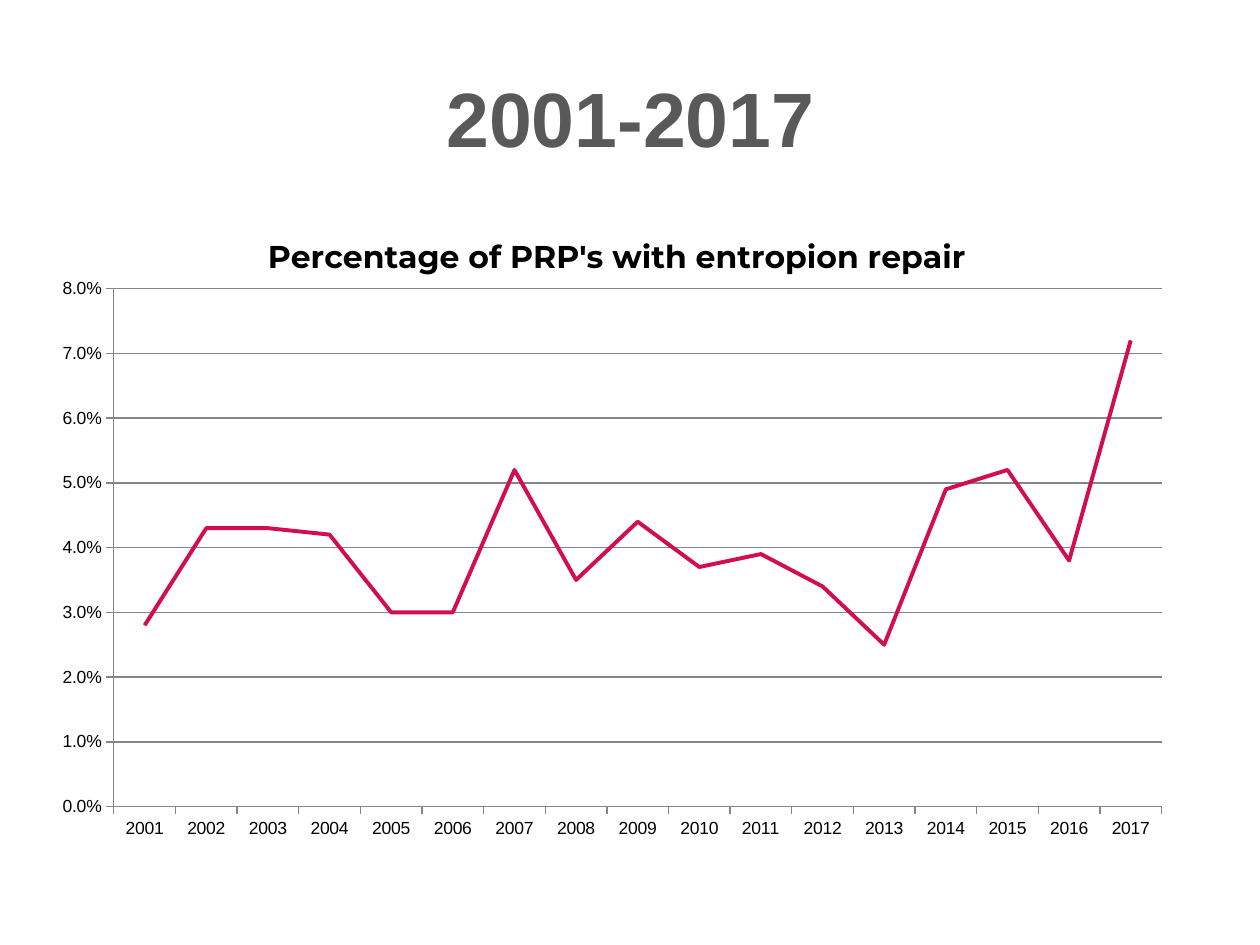
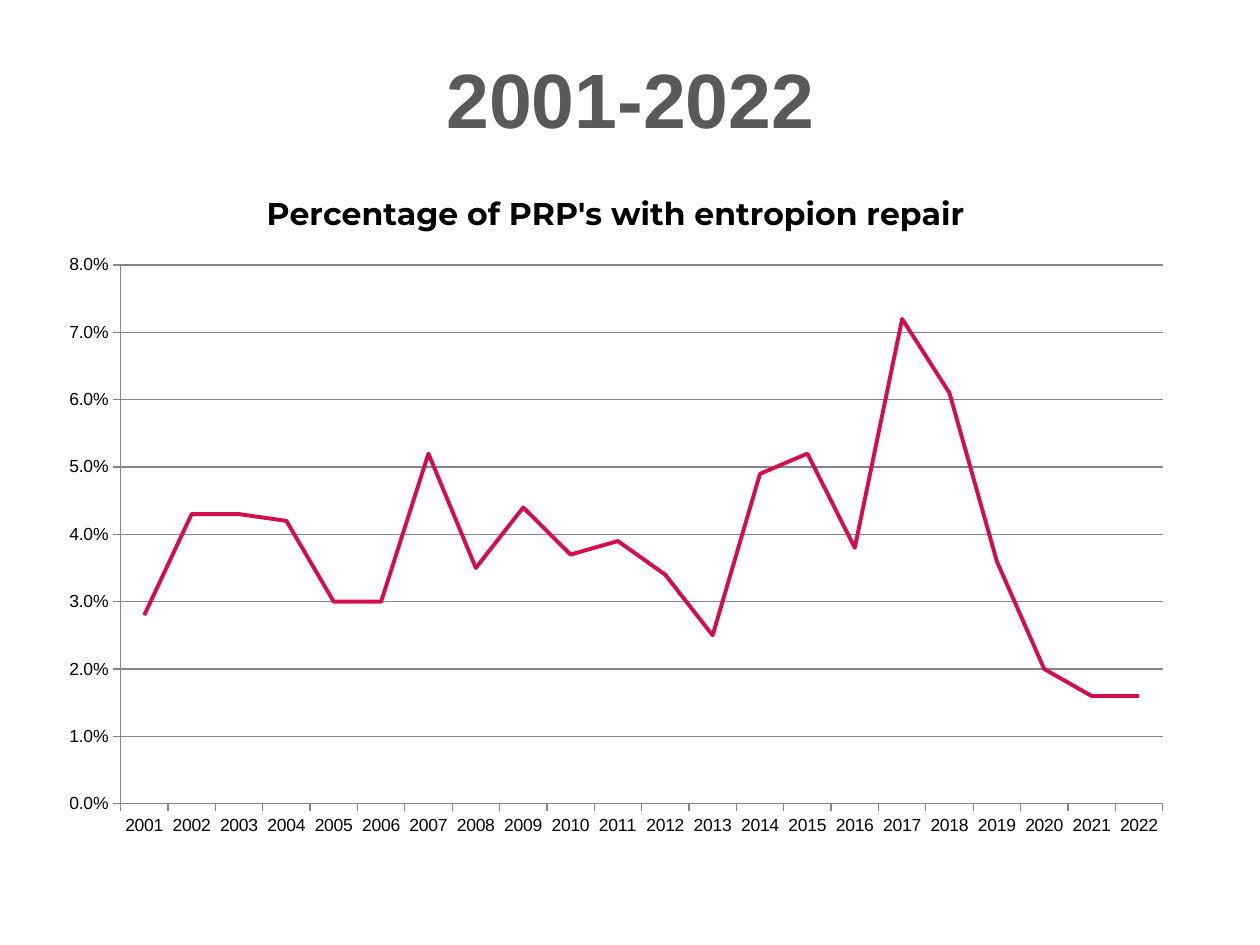
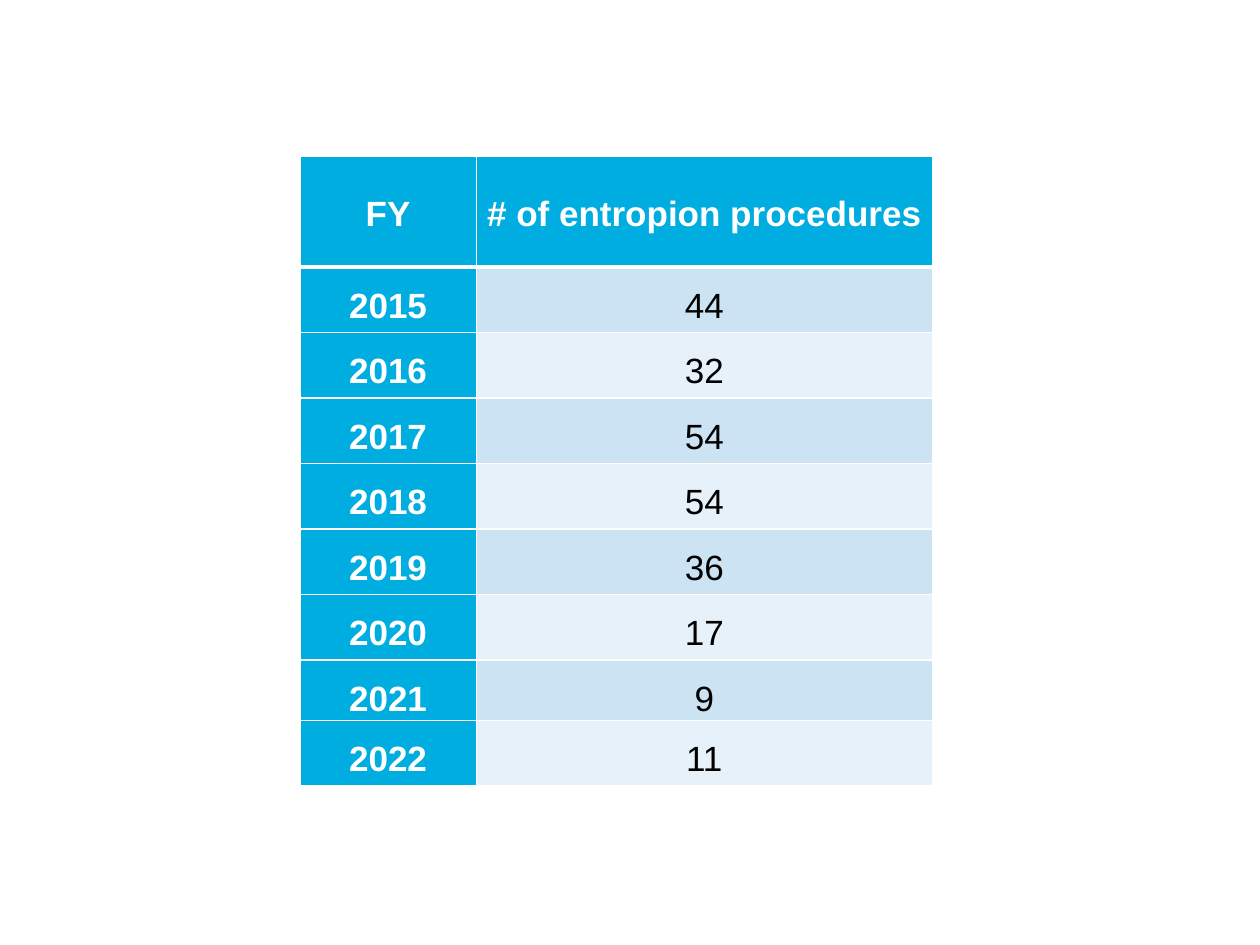
"""Build three slides on entropion repair: two line charts and a table."""
from lxml import etree
from pptx import Presentation
from pptx.chart.data import CategoryChartData
from pptx.dml.color import RGBColor
from pptx.enum.chart import XL_CHART_TYPE as CT, XL_MARKER_STYLE as MS, XL_TICK_MARK as TM
from pptx.enum.text import MSO_ANCHOR, PP_ALIGN
from pptx.oxml import parse_xml
from pptx.oxml.ns import nsdecls, qn
from pptx.util import Inches, Pt

GREY = RGBColor(0x59, 0x59, 0x59)
AXIS_GREY = RGBColor(0x86, 0x86, 0x86)
RED = RGBColor(0xD2, 0x0E, 0x4E)
BLUE = RGBColor(0x00, 0xAD, 0xE0)
BAND_DARK = RGBColor(0xCC, 0xE3, 0xF3)
BAND_LIGHT = RGBColor(0xE7, 0xF1, 0xF9)
WHITE = RGBColor(0xFF, 0xFF, 0xFF)
BLACK = RGBColor(0x00, 0x00, 0x00)
FONT = "Arial"
CHART_TITLE = "Percentage of PRP's with entropion repair"
FIRST_YEAR = 2001
RATES = [0.028, 0.043, 0.043, 0.042, 0.03, 0.03, 0.052, 0.035, 0.044, 0.037, 0.039,
         0.034, 0.025, 0.049, 0.052, 0.038, 0.072, 0.061, 0.036, 0.02, 0.016, 0.016]
PROCEDURES = [("FY", "# of entropion procedures"), ("2015", "44"), ("2016", "32"),
              ("2017", "54"), ("2018", "54"), ("2019", "36"), ("2020", "17"),
              ("2021", "9"), ("2022", "11")]


def style_font(font, size, color, bold=False, name=FONT):
    font.name, font.size, font.bold = name, Pt(size), bold
    font.color.rgb = color


def add_border(cell, side, width):
    ln = etree.SubElement(cell._tc.get_or_add_tcPr(), qn(f"a:{side}"), w=str(Pt(width)))
    fill = etree.SubElement(ln, qn("a:solidFill"))
    etree.SubElement(fill, qn("a:srgbClr"), val=str(WHITE))


prs = Presentation()
prs.slide_width, prs.slide_height = Inches(10), Inches(7.5)

chart_slides = [
    (2017, 0.39, (0.39, 1.66, 9.01, 5.01), (0.057, 0.126, 0.923, 0.821)),
    (2022, 0.24, (0.37, 1.31, 9.03, 5.44), (0.065, 0.146, 0.916, 0.786)),
]
for last_year, title_top, box, plot in chart_slides:
    s = prs.slides.add_slide(prs.slide_layouts[5])
    title = s.shapes.title
    title.left, title.top = Inches(0.88), Inches(title_top)
    title.width, title.height = Inches(8.25), Inches(1.07)
    tf = title.text_frame
    tf.text = f"{FIRST_YEAR}-{last_year}"
    tf.vertical_anchor = MSO_ANCHOR.MIDDLE
    p = tf.paragraphs[0]
    p.alignment = PP_ALIGN.CENTER
    style_font(p.font, 44, GREY, bold=True)

    years = range(FIRST_YEAR, last_year + 1)
    data = CategoryChartData(number_format="0.0%")
    data.categories = [str(year) for year in years]
    data.add_series("Series 1", RATES[:len(years)])
    chart = s.shapes.add_chart(CT.LINE, *map(Inches, box), data).chart
    chart.has_legend = False
    style_font(chart.font, 10, BLACK)
    chart.has_title = True
    tf = chart.chart_title.text_frame
    tf.text = CHART_TITLE
    style_font(tf.paragraphs[0].font, 18, BLACK, bold=True, name="Montserrat")

    chart.plots[0].vary_by_categories = False
    line = chart.plots[0].series[0]
    line.smooth = False
    line.marker.style = MS.NONE
    line.format.line.color.rgb = RED
    line.format.line.width = Pt(2.25)

    values = chart.value_axis
    values.minimum_scale, values.maximum_scale, values.major_unit = 0, 0.08, 0.01
    values.tick_labels.number_format = "0.0%"
    values.tick_labels.number_format_is_linked = False
    values.has_major_gridlines = True
    for axis in (values, chart.category_axis):
        axis.major_tick_mark = TM.OUTSIDE
        axis.minor_tick_mark = TM.NONE
        axis.format.line.color.rgb = AXIS_GREY
    values.major_gridlines.format.line.color.rgb = AXIS_GREY

    area = chart._chartSpace.chart.plotArea
    for old in area.findall(qn("c:layout")):
        area.remove(old)
    x, y, w, h = plot
    area.insert(0, parse_xml(
        f'<c:layout {nsdecls("c")}><c:manualLayout><c:layoutTarget val="inner"/>'
        f'<c:xMode val="edge"/><c:yMode val="edge"/><c:x val="{x}"/><c:y val="{y}"/>'
        f'<c:w val="{w}"/><c:h val="{h}"/></c:manualLayout></c:layout>'))

s = prs.slides.add_slide(prs.slide_layouts[6])
table = s.shapes.add_table(len(PROCEDURES), 2, Inches(2.38), Inches(1.24),
                           Inches(5.02), Inches(5)).table
table.first_col = True
table.columns[0].width, table.columns[1].width = Inches(1.4), Inches(3.62)
for i, row in enumerate(PROCEDURES):
    table.rows[i].height = Inches({0: 0.88, 7: 0.48}.get(i, 0.52))
    for j, text in enumerate(row):
        cell = table.cell(i, j)
        is_header = i == 0 or j == 0
        cell.margin_left = cell.margin_right = Inches(0.07)
        cell.margin_top = cell.margin_bottom = 0
        for side in ("lnL", "lnR", "lnT", "lnB"):
            thick = (i == 0 and side == "lnB") or (i == 1 and side == "lnT")
            add_border(cell, side, 3 if thick else 1)
        cell.fill.solid()
        cell.fill.fore_color.rgb = BLUE if is_header else BAND_DARK if i % 2 else BAND_LIGHT
        cell.text = text
        p = cell.text_frame.paragraphs[0]
        p.alignment = PP_ALIGN.CENTER
        p.line_spacing = 2.0 if i == 0 else 1.5
        style_font(p.font, 20, WHITE if is_header else BLACK, bold=is_header)

prs.save("out.pptx")
